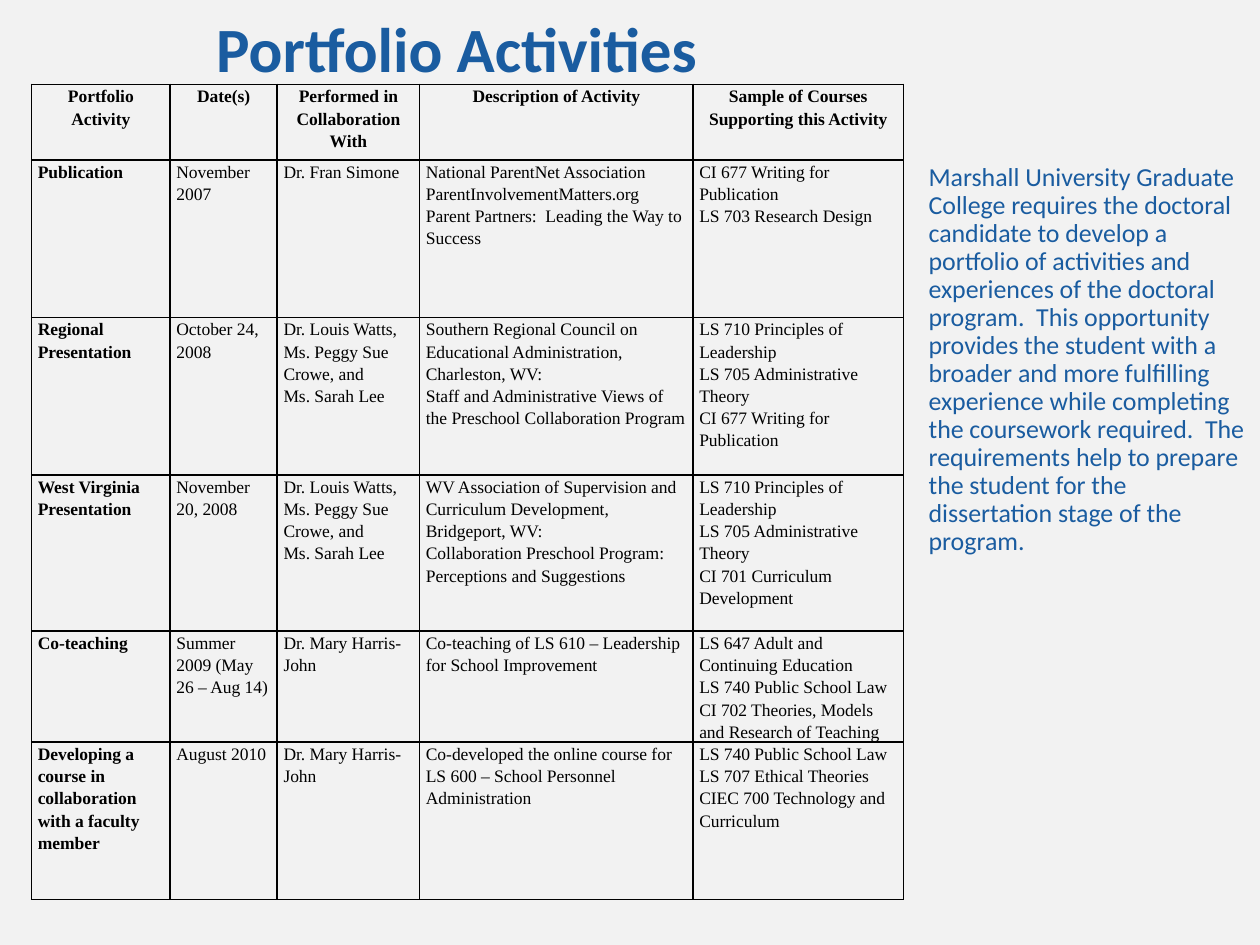
"""Build the portfolio activities slide."""
from lxml import etree
from pptx import Presentation
from pptx.dml.color import RGBColor
from pptx.enum.text import MSO_ANCHOR, MSO_AUTO_SIZE, PP_ALIGN
from pptx.oxml import parse_xml
from pptx.oxml.ns import nsdecls, qn
from pptx.util import Inches, Pt

LEFT, CENTER = PP_ALIGN.LEFT, PP_ALIGN.CENTER
TOP, MIDDLE = MSO_ANCHOR.TOP, MSO_ANCHOR.MIDDLE
NO_FIT = MSO_AUTO_SIZE.NONE

THEME = {
    "back": RGBColor.from_string("F2F2F2"),
    "line": "000000",
    "title": {"name": "Calibri", "size": Pt(36), "bold": True, "color": "1A5CA0"},
    "body": {"name": "Calibri", "size": Pt(14.8), "bold": False, "color": "1A5CA0"},
    "cell": {"name": "Times New Roman", "size": Pt(10), "color": "000000"},
}

WIDTHS = [1.1, 0.85, 1.13, 2.17, 1.67]
HEIGHTS = [0.6, 1.25, 1.25, 1.24, 0.83, 1.25]
TEAM = "Dr. Louis Watts,\nMs. Peggy Sue Crowe, and\nMs. Sarah Lee"
MENTOR = "Dr. Mary Harris-John"
LEAD = "LS 710 Principles of Leadership\nLS 705 Administrative Theory\n"
ROWS = [
    ["Portfolio Activity", "Date(s)", "Performed in Collaboration With",
     "Description of Activity", "Sample of Courses Supporting this Activity"],
    ["Publication", "November 2007", "Dr. Fran Simone",
     "National ParentNet Association\nParentInvolvementMatters.org\n"
     "Parent Partners:  Leading the Way to Success",
     "CI 677 Writing for Publication\nLS 703 Research Design"],
    ["Regional Presentation", "October 24, 2008", TEAM,
     "Southern Regional Council on Educational Administration, Charleston, WV:\n"
     "Staff and Administrative Views of the Preschool Collaboration Program",
     LEAD + "CI 677 Writing for Publication"],
    ["West Virginia Presentation", "November 20, 2008", TEAM,
     "WV Association of Supervision and Curriculum Development, Bridgeport, WV:\n"
     "Collaboration Preschool Program:  Perceptions and Suggestions",
     LEAD + "CI 701 Curriculum Development"],
    ["Co-teaching", "Summer 2009 (May 26 – Aug 14)", MENTOR,
     "Co-teaching of LS 610 – Leadership for School Improvement",
     "LS 647 Adult and Continuing Education\nLS 740 Public School Law\n"
     "CI 702 Theories, Models and Research of Teaching"],
    ["Developing a course in collaboration with a faculty member", "August 2010", MENTOR,
     "Co-developed the online course for LS 600 – School Personnel Administration",
     "LS 740 Public School Law\nLS 707 Ethical Theories\n"
     "CIEC 700 Technology and Curriculum"],
]
NOTE = (
    "Marshall University Graduate College requires the doctoral candidate to develop "
    "a portfolio of activities and experiences of the doctoral program.  This "
    "opportunity provides the student with a broader and more fulfilling experience "
    "while completing the coursework required.  The requirements help to prepare the "
    "student for the dissertation stage of the program."
)


def apply(item, values):
    for key, value in values.items():
        if key == "color":
            item.color.rgb = RGBColor.from_string(value)
        else:
            setattr(item, key, value)


def style(para, font, align, space):
    apply(para, {"alignment": align, "line_spacing": space, "space_before": Pt(0)})
    apply(para.font, font)
    for run in para.runs:
        apply(run.font, font)


deck = Presentation()
apply(deck, {"slide_width": Inches(10), "slide_height": Inches(7.5)})
slide = deck.slides.add_slide(deck.slide_layouts[1])
slide.background.fill.solid()
slide.background.fill.fore_color.rgb = THEME["back"]

HOLDERS = [
    ("title", "Portfolio Activities", (0.25, 0, 6.75, 0.75), MIDDLE, CENTER, 1.0),
    ("body", NOTE, (7.27, 1.25, 2.71, 3.5), TOP, LEFT, Pt(16)),
]
for shape, (kind, text, place, anchor, align, space) in zip(slide.placeholders, HOLDERS):
    apply(shape, dict(zip(("left", "top", "width", "height"), map(Inches, place))))
    frame = shape.text_frame
    apply(frame, {"text": text, "word_wrap": True, "auto_size": NO_FIT,
                  "vertical_anchor": anchor})
    para = frame.paragraphs[0]
    if kind == "body":
        props = para._p.get_or_add_pPr()
        props.set("marL", "0")
        props.set("indent", "0")
        etree.SubElement(props, qn("a:buNone"))
    style(para, THEME[kind], align, space)

grid = slide.shapes.add_table(
    len(ROWS), len(WIDTHS), Inches(0.25), Inches(0.67),
    Inches(sum(WIDTHS)), Inches(sum(HEIGHTS))).table
apply(grid, {"first_row": False, "horz_banding": False})
for col, width in zip(grid.columns, WIDTHS):
    col.width = Inches(width)
for row, height in zip(grid.rows, HEIGHTS):
    row.height = Inches(height)

for r, row in enumerate(ROWS):
    for c, text in enumerate(row):
        cell = grid.cell(r, c)
        apply(cell, {"text": text, "vertical_anchor": TOP,
                     "margin_left": Inches(0.05), "margin_right": Inches(0.05),
                     "margin_top": 0, "margin_bottom": 0})
        props = cell._tc.get_or_add_tcPr()
        for side in "LRTB":
            props.append(parse_xml(
                f'<a:ln{side} {nsdecls("a")} w="{Pt(1)}"><a:solidFill>'
                f'<a:srgbClr val="{THEME["line"]}"/></a:solidFill></a:ln{side}>'))
        cell.fill.background()
        font = {**THEME["cell"], "bold": r == 0 or c == 0}
        for para in cell.text_frame.paragraphs:
            style(para, font, LEFT if r else CENTER, 1.15)

deck.save("out.pptx")
